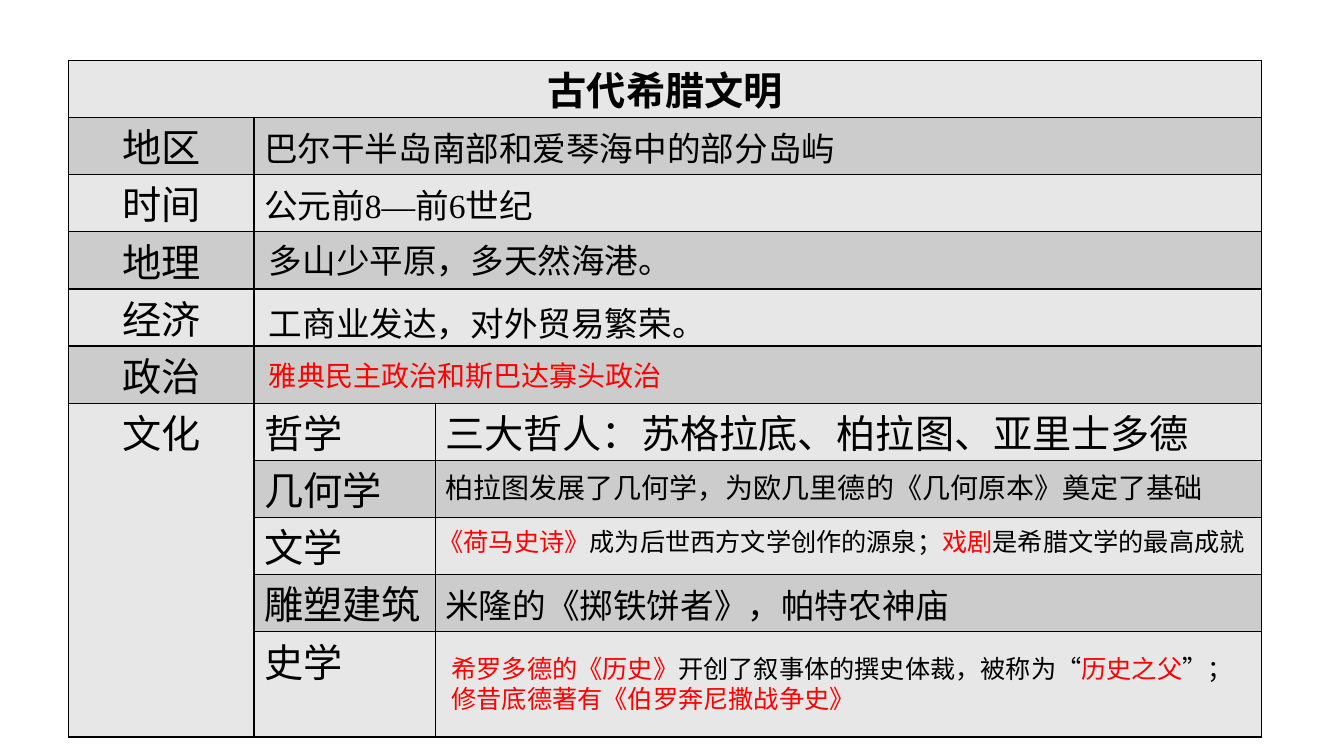
from dataclasses import dataclass
from lxml.etree import SubElement
from pptx import Presentation
from pptx.dml.color import RGBColor
from pptx.enum.text import MSO_AUTO_SIZE, PP_ALIGN
from pptx.oxml.ns import qn
from pptx.util import Cm, Pt


@dataclass(frozen=True)
class Theme:
    ink: str = "000000"
    red: str = "FF0000"
    light: str = "E7E7E7"
    dark: str = "CCCCCC"
    sans: str = "Calibri"
    serif: str = "Times New Roman"
    han: str = "Noto Sans CJK SC"
    large: int = 28
    mid: int = 24
    small: int = 20
    note: int = 18


T = Theme()

TOPICS = [
    ("地区", "巴尔干半岛南部和爱琴海中的部分岛屿"),
    ("时间", "公元前8—前6世纪"),
    ("地理", ""),
    ("经济", ""),
    ("政治", ""),
]
CULTURE = [
    ("哲学", "三大哲人：苏格拉底、柏拉图、亚里士多德", T.large, T.sans),
    ("几何学", "柏拉图发展了几何学，为欧几里德的《几何原本》奠定了基础", T.small, T.sans),
    ("文学", "", T.note, T.sans),
    ("雕塑建筑", "米隆的《掷铁饼者》，帕特农神庙", T.mid, T.serif),
    ("史学", "", T.note, T.sans),
]
COLS = (4.67, 4.57, 20.83)
ROW, LAST = 1.44, 2.65

# Each note: box in cm, size, font, wrap, paragraphs of (text, colour[, font])
NOTES = [
    ((10.8, 13.13, 20.96, 1.02), T.note, T.serif, True, [[
        ("《荷马史诗》", T.red), ("成为后世西方文学创作的源泉；", T.ink),
        ("戏剧", T.red), ("是希腊文学的最高成就", T.ink)]]),
    ((11.13, 16.33, 20.19, 1.8), T.note, T.serif, False, [
        [("希罗多德的《历史》", T.red),
         ("开创了叙事体的撰史体裁，被称为", T.ink),
         ("“", T.ink, T.han), ("历史之父", T.red),
         ("”", T.ink, T.han), ("；", T.ink)],
        [("修昔底德著有《伯罗奔尼撒战争史》", T.red)]]),
    ((6.53, 8.92, 12.27, 1.12), T.small, T.serif, True,
     [[("雅典民主政治和斯巴达寡头政治", T.red)]]),
    ((6.53, 7.52, 11.51, 1.27), T.mid, T.sans, False,
     [[("工商业发达，对外贸易繁荣。", T.ink)]]),
    ((6.53, 5.92, 10.67, 1.27), T.mid, T.sans, False,
     [[("多山少平原，多天然海港。", T.ink)]]),
]


def add_run(para, text, size, face, color=T.ink, bold=False):
    run = para.add_run()
    run.text = text
    font = run.font
    font.size, font.name, font.bold = Pt(size), face, bold
    font.color.rgb = RGBColor.from_string(color)
    SubElement(font._element, qn("a:ea"), typeface=T.han)


def style_cell(cell, fill):
    """Draw thin borders on all sides, then the fill."""
    props = cell._tc.get_or_add_tcPr()
    for side in ("lnL", "lnR", "lnT", "lnB"):
        line = SubElement(props, qn(f"a:{side}"), w=str(Pt(1)))
        paint = SubElement(line, qn("a:solidFill"))
        SubElement(paint, qn("a:srgbClr"), val=T.ink)
    cell.fill.solid()
    cell.fill.fore_color.rgb = RGBColor.from_string(fill)


def fill_cell(cell, text, size=T.large, face=T.sans, center=False, bold=False):
    if not text:
        return
    # The largest type needs the full row height
    cell.margin_top = Cm(0 if size == T.large else 0.13)
    cell.margin_bottom = Cm(0)
    para = cell.text_frame.paragraphs[0]
    para.alignment = PP_ALIGN.CENTER if center else PP_ALIGN.LEFT
    add_run(para, text, size, face, bold=bold)


def add_grid(slide, left, top):
    count = 1 + len(TOPICS) + len(CULTURE)
    high = ROW * (count - 1) + LAST
    grid = slide.shapes.add_table(
        count, len(COLS), Cm(left), Cm(top), Cm(sum(COLS)), Cm(high)).table
    for col, width in zip(grid.columns, COLS):
        col.width = Cm(width)
    for i, row in enumerate(grid.rows):
        row.height = Cm(LAST if i == count - 1 else ROW)
        for cell in row.cells:
            style_cell(cell, T.dark if i % 2 else T.light)

    grid.cell(0, 0).merge(grid.cell(0, 2))
    fill_cell(grid.cell(0, 0), "古代希腊文明", center=True, bold=True)
    for i, (name, text) in enumerate(TOPICS, 1):
        grid.cell(i, 1).merge(grid.cell(i, 2))
        fill_cell(grid.cell(i, 0), name, center=True)
        fill_cell(grid.cell(i, 1), text, T.mid, T.serif)

    first = 1 + len(TOPICS)
    grid.cell(first, 0).merge(grid.cell(count - 1, 0))
    fill_cell(grid.cell(first, 0), "文化", center=True)
    for i, (name, text, size, face) in enumerate(CULTURE, first):
        fill_cell(grid.cell(i, 1), name)
        fill_cell(grid.cell(i, 2), text, size, face)


def add_note(slide, box, size, face, wrap, paras):
    frame = slide.shapes.add_textbox(*map(Cm, box)).text_frame
    frame.word_wrap = wrap
    frame.auto_size = MSO_AUTO_SIZE.SHAPE_TO_FIT_TEXT
    for i, runs in enumerate(paras):
        para = frame.add_paragraph() if i else frame.paragraphs[0]
        para.alignment = PP_ALIGN.JUSTIFY if wrap else PP_ALIGN.LEFT
        for text, color, *other in runs:
            add_run(para, text, size, other[0] if other else face, color)


def main():
    deck = Presentation()
    deck.slide_width, deck.slide_height = Cm(33.87), Cm(19.05)
    slide = deck.slides.add_slide(deck.slide_layouts[6])
    add_grid(slide, 1.73, 1.52)
    for note in NOTES:
        add_note(slide, *note)
    deck.save("out.pptx")


if __name__ == "__main__":
    main()
